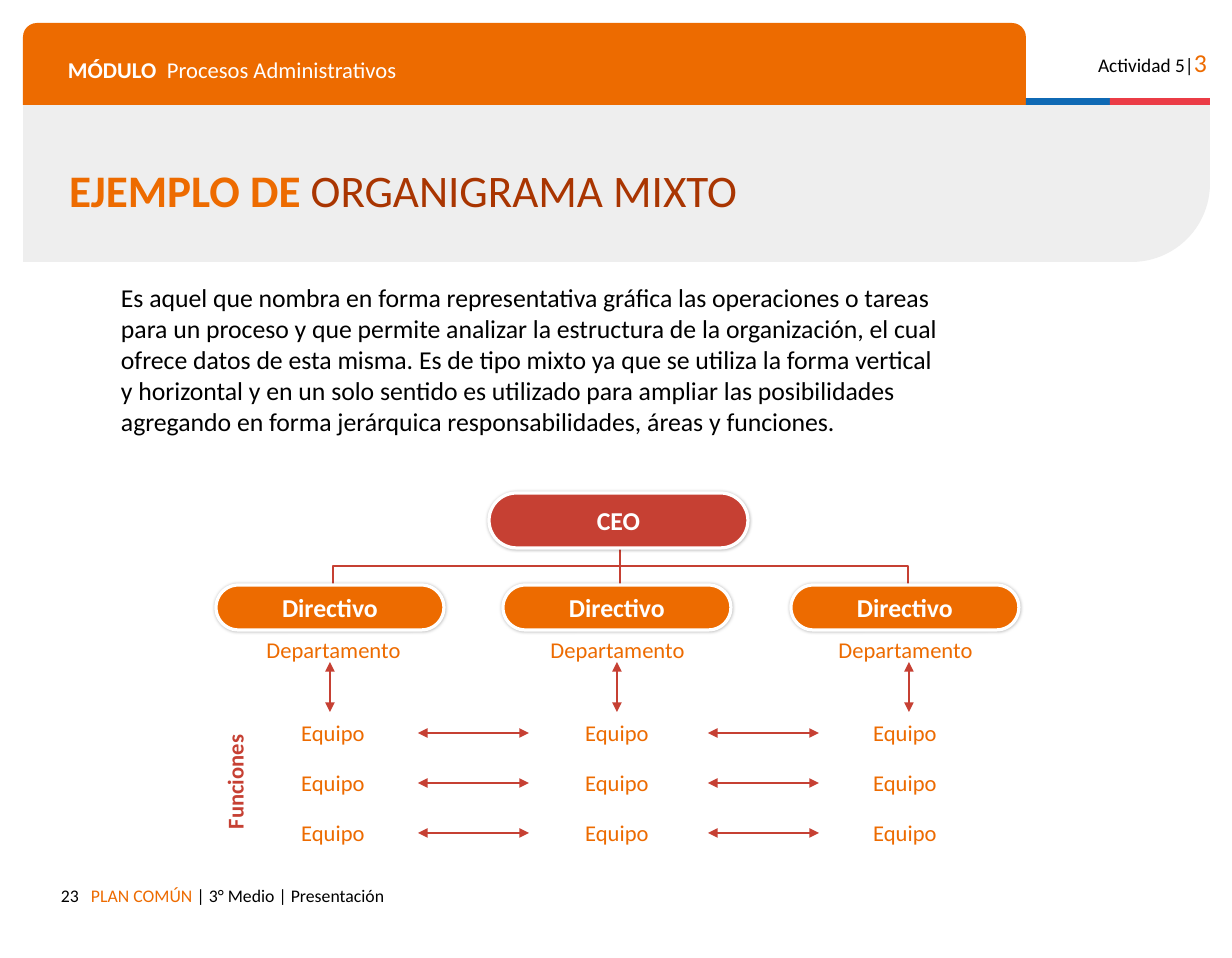
"""Build the slide with an example of a mixed organisation chart."""
from lxml.etree import SubElement as Sub
from pptx import Presentation
from pptx.dml.color import RGBColor as Rgb
from pptx.enum.shapes import MSO_CONNECTOR as Wire, MSO_SHAPE as Form
from pptx.enum.text import MSO_ANCHOR as Anchor, MSO_AUTO_SIZE as Fit, PP_ALIGN as Align
from pptx.oxml.ns import qn
from pptx.util import Pt

PX = 914400 / 116
THEME = {
    "font": "Calibri",
    "orange": Rgb.from_string("ED6B00"),
    "rust": Rgb.from_string("A93501"),
    "red": Rgb.from_string("C64033"),
    "grey": Rgb.from_string("EEEEEE"),
    "blue": Rgb.from_string("0F69B4"),
    "coral": Rgb.from_string("EB3C46"),
    "white": Rgb.from_string("FFFFFF"),
    "black": Rgb.from_string("000000"),
    "title": 28, "body": 16, "label": 14, "small": 12, "foot": 11,
}


def px(*nums):
    """Turn px lengths into EMU."""
    return [round(num * PX) for num in nums]


def write(shape, runs, inset=6, align=Align.LEFT, anchor=Anchor.TOP, wrap=True, gap=1.0):
    """Fill a shape with one paragraph of (text, size, colour, bold) runs."""
    frame = shape.text_frame
    pad = px(inset)[0]
    form = {"auto_size": Fit.NONE, "word_wrap": wrap, "vertical_anchor": anchor,
            "margin_left": pad, "margin_right": pad, "margin_top": pad, "margin_bottom": pad}
    for key, val in form.items():
        setattr(frame, key, val)
    para = frame.paragraphs[0]
    for key, val in {"alignment": align, "line_spacing": gap, "space_before": Pt(0)}.items():
        setattr(para, key, val)
    for text, size, hue, bold in runs:
        run = para.add_run()
        run.text = text
        for key, val in {"name": THEME["font"], "size": Pt(THEME[size]), "bold": bold}.items():
            setattr(run.font, key, val)
        run.font.color.rgb = THEME[hue]
    return para


deck = Presentation()
deck.slide_width, deck.slide_height = px(1232, 958)
slide = deck.slides.add_slide(deck.slide_layouts[1])
shapes = slide.shapes
title, body = slide.placeholders

bands = [
    (Form.ROUND_1_RECTANGLE, 538, -410, 157, 1187, "grey", 90, [0.5]),
    (Form.ROUND_2_SAME_RECTANGLE, 23, 23, 1003, 82, "orange", 0, [0.17, 0]),
    (Form.RECTANGLE, 1026, 98, 84, 7, "blue", 0, []),
    (Form.RECTANGLE, 1110, 98, 100, 7, "coral", 0, []),
]
for form, x, y, w, h, hue, turn, bends in bands:
    band = shapes.add_shape(form, *px(x, y, w, h))
    band.shadow.inherit = False
    band.rotation = turn
    band.fill.solid()
    band.fill.fore_color.rgb = THEME[hue]
    band.line.fill.background()
    for spot, bend in enumerate(bends):
        band.adjustments[spot] = bend

tree = title.element.getparent()
for holder, spot in ((title, (57, 161, 827, 68)), (body, (115, 276, 839, 167))):
    tree.append(holder.element)
    for key, val in zip(("left", "top", "width", "height"), px(*spot)):
        setattr(holder, key, val)

write(title, [("EJEMPLO DE ", "title", "orange", True),
              ("ORGANIGRAMA MIXTO", "title", "rust", False)],
      inset=12, anchor=Anchor.MIDDLE, gap=0.8)
story = write(body, [(
    "Es aquel que nombra en forma representativa gráfica las operaciones o tareas para un "
    "proceso y que permite analizar la estructura de la organización, el cual ofrece datos de "
    "esta misma. Es de tipo mixto ya que se utiliza la forma vertical y horizontal y en un solo "
    "sentido es utilizado para ampliar las posibilidades agregando en forma jerárquica "
    "responsabilidades, áreas y funciones.", "body", "black", False)])
props = story._p.get_or_add_pPr()
props.set("marL", "0")
props.set("indent", "0")
Sub(props, qn("a:buNone"))

notes = [
    (1071, 35, 148, 50, Align.RIGHT, [("Actividad 5|", "small", "black", False),
                                      ("3", "body", "orange", False)]),
    (48, 873, 43, 41, Align.RIGHT, [("23", "foot", "black", False)]),
    (79, 873, 830, 41, Align.LEFT, [("PLAN COMÚN ", "foot", "orange", False),
                                    ("| 3° Medio | Presentación", "foot", "black", False)]),
]
for x, y, w, h, align, runs in notes:
    write(shapes.add_textbox(*px(x, y, w, h)), runs, inset=12, align=align, wrap=False)

unit = write(shapes.add_textbox(*px(56, 44, 944, 48)),
             [("MÓDULO", "label", "white", True),
              ("\tProcesos Administrativos", "label", "white", False)], inset=12)
tabs = Sub(unit._p.get_or_add_pPr(), qn("a:tabLst"))
Sub(tabs, qn("a:tab"), pos=str(px(99)[0]), algn="l")

draft = shapes.build_freeform(*px(333, 612), scale=1.0)
draft.add_line_segments([px(*dot) for dot in ((333, 566), (908, 566), (908, 626))], close=False)
fork = draft.convert_to_shape()
fork.shadow.inherit = False
fork.fill.background()
fork.line.color.rgb = THEME["red"]
fork.line.width = Pt(1.5)

lines = [(620, 528, 620, 626, 1.5, False)]
lines += [(x, 662, x, 712, 0.75, True) for x in (330, 617, 909)]
lines += [(x, y, x + 111, y, 0.75, True) for x in (418, 708) for y in (733, 783, 833)]
for x, y, right, foot, width, heads in lines:
    wire = shapes.add_connector(Wire.STRAIGHT, *px(x, y, right, foot))
    wire.line.color.rgb = THEME["red"]
    wire.line.width = Pt(width)
    look = wire.element.spPr
    if heads:
        for end in ("a:headEnd", "a:tailEnd"):
            Sub(look.find(qn("a:ln")), qn(end), type="triangle")
    Sub(look, qn("a:effectLst"))

pills = [("CEO", 489, 493, 259, 55, "red")]
pills += [("Directivo", x, 585, 228, 45, "orange") for x in (216, 503, 791)]
for text, x, y, w, h, hue in pills:
    pill = shapes.add_shape(Form.ROUNDED_RECTANGLE, *px(x, y, w, h))
    pill.adjustments[0] = 0.5
    pill.fill.solid()
    pill.fill.fore_color.rgb = THEME[hue]
    pill.line.color.rgb = THEME["white"]
    pill.line.width = Pt(2)
    pill.shadow.inherit = False
    glow = Sub(pill.element.spPr.find(qn("a:effectLst")), qn("a:outerShdw"),
               blurRad=str(Pt(2)), dist="0", dir="0", rotWithShape="0")
    shade = Sub(glow, qn("a:srgbClr"), val=str(THEME["black"]))
    Sub(shade, qn("a:alpha"), val="28000")
    write(pill, [(text, "body", "white", True)], align=Align.CENTER, anchor=Anchor.MIDDLE)

labels = [("Funciones", 179, 764, 108, "red", True, 270)]
for mid in (333, 617, 905):
    labels.append(("Departamento", mid - 73, 630, 147, "orange", False, 0))
    for row in range(3):
        labels.append(("Equipo", mid - 38, 713 + 50 * row, 76, "orange", False, 0))
for text, x, y, w, hue, bold, turn in labels:
    label = shapes.add_textbox(*px(x, y, w, 36))
    label.rotation = turn
    write(label, [(text, "label", hue, bold)], align=Align.CENTER, wrap=False)

deck.save("out.pptx")
